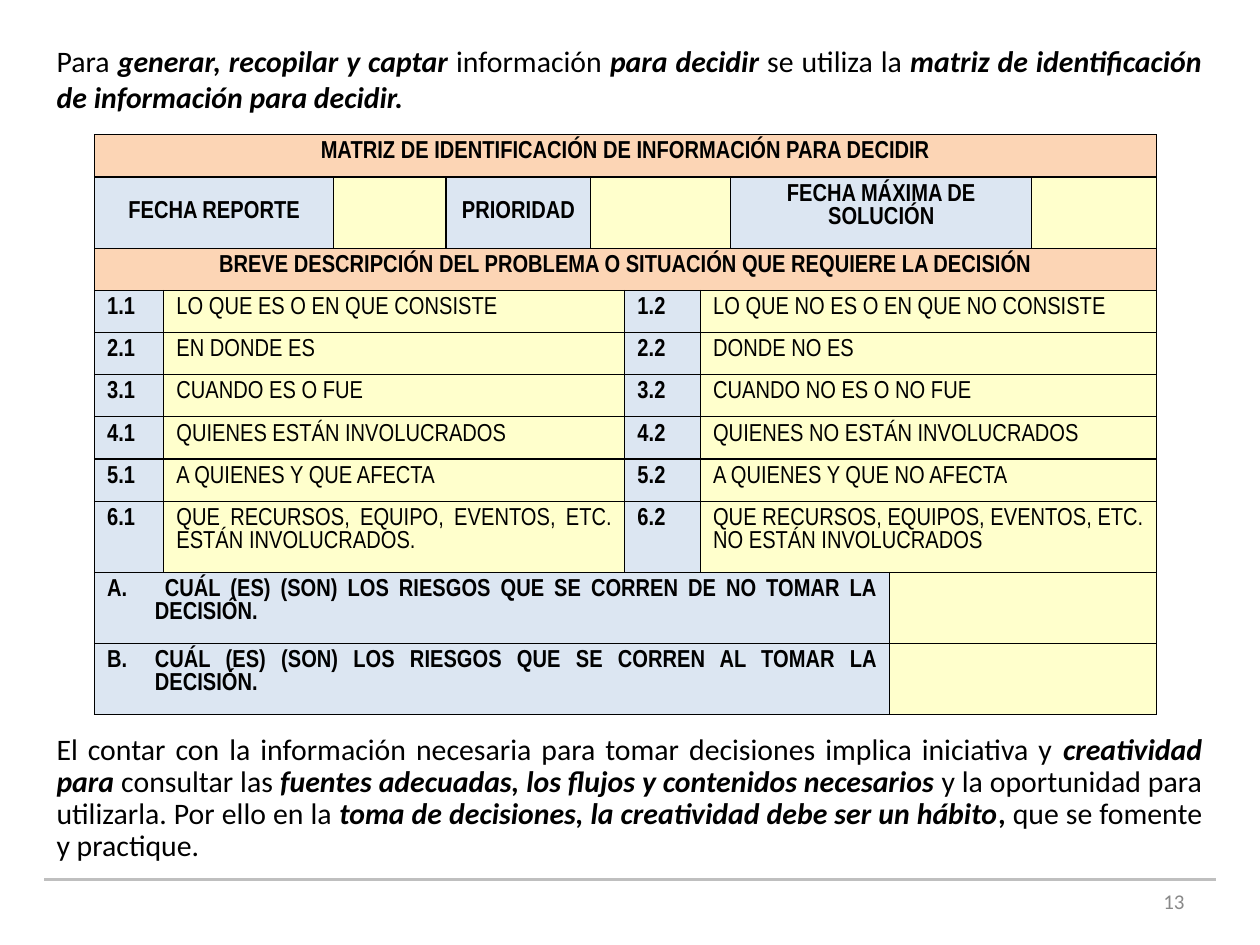
from dataclasses import dataclass
from typing import Any, Optional

import lxml.etree
import pptx
import pptx.dml.color
import pptx.enum.shapes
import pptx.enum.text
import pptx.oxml.ns
import pptx.util

ALIGN = pptx.enum.text.PP_ALIGN
ANCHOR = pptx.enum.text.MSO_ANCHOR
Runs = list[tuple[str, str]]


@dataclass(frozen=True)
class Theme:
    body_font: str = "Calibri"
    matrix_font: str = "Arial Narrow"
    body_size: float = 17
    matrix_size: float = 14
    number_size: float = 12
    ink: str = "000000"
    muted: str = "898989"
    rule: str = "BFBFBF"
    heading: str = "FCD5B5"
    label: str = "DCE6F2"
    entry: str = "FFFFCC"


@dataclass(frozen=True)
class Area:
    left: float
    top: float
    width: float
    height: float


@dataclass(frozen=True)
class Cell:
    span: int
    fill: str
    text: str = ""
    align: Any = ALIGN.LEFT
    bold: bool = True
    anchor: Any = ANCHOR.TOP
    letter: Optional[int] = None


THEME = Theme()
WIDTH, HEIGHT = pptx.util.Inches(10), pptx.util.Inches(7.5)
MARGIN = 0.035
INTRO = Area(MARGIN, 0.29 / 7.5, 0.929, 0.67 / 7.5)
CLOSING = Area(MARGIN, 5.78 / 7.5, 0.929, 1.12 / 7.5)
NUMBER = Area(0.717, 6.95 / 7.5, 0.233, 0.4 / 7.5)
MATRIX = Area(0.075, 1.07 / 7.5, 0.843, 4.6 / 7.5)
FOOT_RULE = 6.98 / 7.5
COLUMNS = [share / 10 for share in
           (0.55, 1.35, 0.89, 1.15, 0.27, 0.6, 0.24, 1.26, 1.13, 0.99)]
ONE_LINE, TWO_LINES = 0.335 / 7.5, 0.565 / 7.5
HANGING = pptx.util.Inches(0.38)

INTRO_TEXT: Runs = [
    ("Para ", ""), ("generar, recopilar y captar", "bi"), (" información ", ""),
    ("para decidir", "bi"), (" se utiliza la ", ""),
    ("matriz de identificación de información para decidir.", "bi"),
]
CLOSING_TEXT: Runs = [
    ("El contar con la información necesaria para tomar decisiones implica iniciativa y ", ""),
    ("creatividad para ", "bi"), ("consultar las ", ""),
    ("fuentes adecuadas, los flujos y contenidos necesarios", "bi"),
    (" y la oportunidad para utilizarla. Por ello en la ", ""),
    ("toma de decisiones, la creatividad debe ser un hábito", "bi"),
    (", ", "b"), ("que se fomente y practique.", ""),
]
QUESTIONS = [
    ("LO QUE ES O EN QUE CONSISTE", "LO QUE NO ES O EN QUE NO CONSISTE"),
    ("EN DONDE ES", "DONDE NO ES"),
    ("CUANDO ES O FUE", "CUANDO NO ES O NO FUE"),
    ("QUIENES ESTÁN INVOLUCRADOS", "QUIENES NO ESTÁN INVOLUCRADOS"),
    ("A QUIENES Y QUE AFECTA", "A QUIENES Y QUE NO AFECTA"),
    ("QUE RECURSOS, EQUIPO, EVENTOS, ETC. ESTÁN INVOLUCRADOS.",
     "QUE RECURSOS, EQUIPOS, EVENTOS, ETC. NO ESTÁN INVOLUCRADOS"),
]
RISKS = [
    " CUÁL (ES) (SON) LOS RIESGOS QUE SE CORREN DE NO TOMAR LA DECISIÓN.",
    "CUÁL (ES) (SON) LOS RIESGOS QUE SE CORREN AL TOMAR LA DECISIÓN.",
]


def rgb(value: str) -> pptx.dml.color.RGBColor:
    return pptx.dml.color.RGBColor.from_string(value)


def add_node(parent: Any, tag: str, **attributes: str) -> Any:
    return lxml.etree.SubElement(parent, pptx.oxml.ns.qn(tag), attributes)


def write(frame: Any, runs: Runs, *, font: str = THEME.body_font,
          size: float = THEME.body_size, color: str = THEME.ink,
          align: Any = ALIGN.JUSTIFY, spacing: Optional[float] = None,
          letter: Optional[int] = None) -> None:
    paragraph = frame.paragraphs[0]
    paragraph.alignment = align
    if spacing:
        paragraph.line_spacing = spacing
    if letter:
        properties = paragraph._p.get_or_add_pPr()
        properties.set("marL", str(int(HANGING)))
        properties.set("indent", str(-int(HANGING)))
        add_node(properties, "a:buFont", typeface="+mj-lt")
        add_node(properties, "a:buAutoNum", type="alphaUcPeriod", startAt=str(letter))
    for text, style in runs:
        run = paragraph.add_run()
        run.text = text
        run.font.name, run.font.size = font, pptx.util.Pt(size)
        run.font.bold, run.font.italic = "b" in style, "i" in style
        run.font.color.rgb = rgb(color)


def place(shape: Any, area: Area) -> Any:
    shape.left, shape.top = int(WIDTH * area.left), int(HEIGHT * area.top)
    shape.width, shape.height = int(WIDTH * area.width), int(HEIGHT * area.height)
    shape.text_frame.word_wrap = True
    shape.text_frame.auto_size = pptx.enum.text.MSO_AUTO_SIZE.NONE
    shape.text_frame.vertical_anchor = ANCHOR.MIDDLE
    return shape.text_frame


def add_text(slide: Any, area: Area) -> Any:
    return place(slide.shapes.add_textbox(0, 0, 0, 0), area)


def outline(cell: Any) -> None:
    properties = cell._tc.get_or_add_tcPr()
    for position, side in enumerate(("a:lnL", "a:lnR", "a:lnT", "a:lnB")):
        border = add_node(properties, side, w=str(int(pptx.util.Pt(0.75))))
        add_node(add_node(border, "a:solidFill"), "a:srgbClr", val=THEME.ink)
        properties.insert(position, border)


def matrix_rows() -> list[tuple[float, list[Cell]]]:
    def heading(text: str) -> list[Cell]:
        return [Cell(10, THEME.heading, text, ALIGN.CENTER)]

    def label(span: int, text: str, anchor: Any = ANCHOR.MIDDLE) -> Cell:
        return Cell(span, THEME.label, text, ALIGN.CENTER, anchor=anchor)

    rows = [
        (ONE_LINE, heading("MATRIZ DE IDENTIFICACIÓN DE INFORMACIÓN PARA DECIDIR")),
        (TWO_LINES, [
            label(2, "FECHA REPORTE"), Cell(1, THEME.entry),
            label(1, "PRIORIDAD"), Cell(3, THEME.entry),
            label(2, "FECHA MÁXIMA DE SOLUCIÓN", ANCHOR.TOP), Cell(1, THEME.entry)]),
        (ONE_LINE, heading(
            "BREVE DESCRIPCIÓN DEL PROBLEMA O SITUACIÓN QUE REQUIERE LA DECISIÓN")),
    ]
    for number, pair in enumerate(QUESTIONS, 1):
        cells = []
        for side, question in enumerate(pair, 1):
            cells += [Cell(1, THEME.label, f"{number}.{side}"),
                      Cell(4, THEME.entry, question, ALIGN.JUSTIFY, bold=False)]
        rows.append((TWO_LINES if number == len(QUESTIONS) else ONE_LINE, cells))
    for letter, risk in enumerate(RISKS, 1):
        rows.append((TWO_LINES, [
            Cell(8, THEME.label, risk, ALIGN.JUSTIFY, letter=letter),
            Cell(2, THEME.entry)]))
    return rows


def add_matrix(slide: Any, area: Area) -> None:
    rows = matrix_rows()
    table = slide.shapes.add_table(
        len(rows), len(COLUMNS), int(WIDTH * area.left), int(HEIGHT * area.top),
        int(WIDTH * area.width), int(HEIGHT * area.height)).table
    table.first_row = table.horz_banding = False
    for column, share in zip(table.columns, COLUMNS):
        column.width = int(WIDTH * share)
    for row, (height, cells) in enumerate(rows):
        table.rows[row].height = int(HEIGHT * height)
        start = 0
        for content in cells:
            end = start + content.span
            for column in range(start, end):
                part = table.cell(row, column)
                part.fill.solid()
                part.fill.fore_color.rgb = rgb(content.fill)
                outline(part)
            cell = table.cell(row, start)
            if content.span > 1:
                cell.merge(table.cell(row, end - 1))
            cell.vertical_anchor = content.anchor
            if content.text:
                write(cell.text_frame, [(content.text, "b" if content.bold else "")],
                      font=THEME.matrix_font, size=THEME.matrix_size,
                      align=content.align, letter=content.letter)
            start = end


def add_foot_rule(slide: Any) -> None:
    y = int(HEIGHT * FOOT_RULE)
    rule = slide.shapes.add_connector(
        pptx.enum.shapes.MSO_CONNECTOR.STRAIGHT,
        int(WIDTH * MARGIN), y, int(WIDTH * (1 - MARGIN)), y)
    rule.line.color.rgb = rgb(THEME.rule)
    rule.line.width = pptx.util.Pt(2)
    add_node(rule._element.spPr, "a:effectLst")


def main() -> None:
    deck = pptx.Presentation()
    deck.slide_width, deck.slide_height = WIDTH, HEIGHT
    slide = deck.slides.add_slide(deck.slide_layouts[5])
    add_foot_rule(slide)
    write(add_text(slide, NUMBER), [("13", "")], size=THEME.number_size,
          color=THEME.muted, align=ALIGN.RIGHT)
    write(place(slide.shapes.title, INTRO), INTRO_TEXT)
    write(add_text(slide, CLOSING), CLOSING_TEXT, spacing=0.9)
    add_matrix(slide, MATRIX)
    deck.save("out.pptx")


if __name__ == "__main__":
    main()
